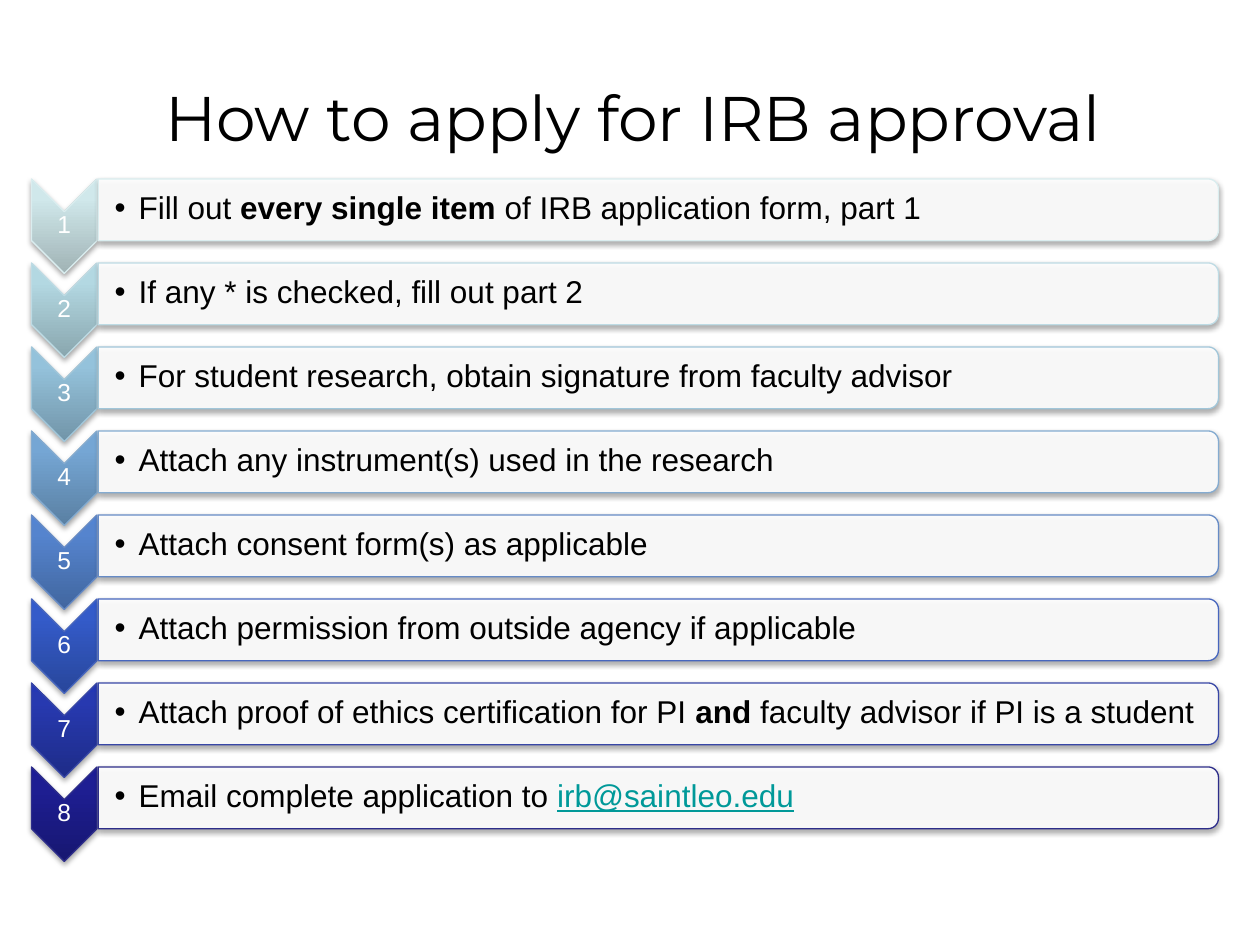
from dataclasses import dataclass

from lxml import etree
from pptx import Presentation, dml, oxml, util as u
from pptx.dml import color
from pptx.enum import shapes, text
from pptx.oxml import ns

Inches = u.Inches


@dataclass(frozen=True)
class Theme:
    head: str = "Montserrat"
    body: str = "Arial"
    ink: str = "000000"
    white: str = "FFFFFF"
    link: str = "009999"
    head_size: int = 36
    body_size: int = 18
    num_size: int = 14
    # Each step: line, then gradient from bottom to top
    steps: tuple = (
        ("DAEDEF", "A0B3B5", "D0E8EB", "D1EAEC"),
        ("BEDBE4", "89A6AE", "B3D8E2", "B2D9E4"),
        ("A1C6D9", "7295A9", "94C2DB", "93C3DD"),
        ("84ABD0", "5A80A3", "75A6D4", "74A7D7"),
        ("668BC6", "41669F", "5584CE", "5384D2"),
        ("4766BE", "28469B", "345BC9", "315ACD"),
        ("3847A6", "1E2C88", "2739B0", "2437B4"),
        ("2D2D8A", "171771", "1E1E93", "1C1C96"),
    )


THEME = Theme()
BOLD = {"bold": True}
LINK = {"tint": THEME.link, "line": True}
ITEMS = (
    (("Fill out ", {}), ("every single item ", BOLD),
     ("of IRB application form, part 1", {})),
    (("If any * is checked, fill out part 2", {}),),
    (("For student research, obtain signature from faculty advisor", {}),),
    (("Attach any instrument(s) used in the research", {}),),
    (("Attach consent form(s) as applicable", {}),),
    (("Attach permission from outside agency if applicable", {}),),
    (("Attach proof of ethics certification for PI ", {}), ("and", BOLD),
     (" faculty advisor if PI is a student", {})),
    (("Email complete application to ", {}), ("irb@saintleo.edu", LINK)),
)
TOP = 1.42
PITCH = 2 / 3


def rgb(code):
    return color.RGBColor.from_string(code)


def node(tag, **attrs):
    item = etree.Element(ns.qn(tag))
    for name, value in attrs.items():
        item.set(name, str(value))
    return item


def tone(code, alpha=100):
    item = node("a:srgbClr", val=code)
    if alpha < 100:
        item.append(node("a:alpha", val=alpha * 1000))
    return item


def write(slide, runs, box, *, font=THEME.body, size=THEME.body_size,
          tint=THEME.ink, align=text.PP_ALIGN.LEFT, inset=0.01, left=None,
          space=None, bullet=False):
    """Add a text box; runs is a list of (words, format) pairs."""
    frame = slide.shapes.add_textbox(*map(Inches, box)).text_frame
    frame.word_wrap = True
    frame.vertical_anchor = text.MSO_ANCHOR.MIDDLE
    frame.margin_top = frame.margin_bottom = frame.margin_right = Inches(inset)
    frame.margin_left = Inches(inset if left is None else left)
    para = frame.paragraphs[0]
    para.alignment = align
    para.line_spacing = space
    if bullet:
        props = para._p.get_or_add_pPr()
        props.set("marL", str(Inches(0.19)))
        props.set("indent", str(-Inches(0.19)))
        props.append(node("a:buFont", typeface=font))
        props.append(node("a:buChar", char="•"))
    for words, form in runs:
        run = para.add_run()
        run.text = words
        run.font.name = font
        run.font.size = u.Pt(size)
        run.font.bold = form.get("bold", False)
        run.font.underline = form.get("line", False)
        run.font.color.rgb = rgb(form.get("tint", tint))


def turned(slide, kind, box, edge):
    """Add a shape turned by 90 degrees that covers box as seen."""
    x, y, w, h = box
    shape = slide.shapes.add_shape(
        kind, Inches(x + (w - h) / 2), Inches(y + (h - w) / 2),
        Inches(h), Inches(w))
    shape.rotation = 90
    shape.line.color.rgb = rgb(edge)
    shape.line.width = u.Pt(0.75)
    shape.shadow.inherit = False
    shade = node("a:outerShdw", blurRad=u.Pt(3.15), dist=u.Pt(1.8),
                 dir=5400000, rotWithShape=0)
    shade.append(tone(THEME.ink, 35))
    shape._element.spPr.find(ns.qn("a:effectLst")).append(shade)
    return shape


def blend(shape, tones):
    """Fill with a gradient that runs from bottom to top."""
    fill = node("a:gradFill", rotWithShape=0)
    stops = node("a:gsLst")
    for place, code in zip((0, 80, 100), tones):
        stop = node("a:gs", pos=place * 1000)
        stop.append(tone(code))
        stops.append(stop)
    fill.extend([stops, node("a:lin", ang=16200000, scaled=0)])
    shape._element.spPr.find(ns.qn("a:ln")).addprevious(fill)


def step(slide, index, runs, tones):
    y = TOP + index * PITCH
    edge, *ramp = tones
    arrow = turned(slide, shapes.MSO_SHAPE.CHEVRON, (0.25, y, 0.52, 0.75), edge)
    blend(arrow, ramp)
    write(slide, [(str(index + 1), {})], (0.25, y + 0.26, 0.52, 0.22),
          size=THEME.num_size, tint=THEME.white,
          align=text.PP_ALIGN.CENTER, space=0.9)
    panel = turned(slide, shapes.MSO_SHAPE.ROUND_2_SAME_RECTANGLE,
                   (0.78, y, 8.89, 0.49), edge)
    panel.fill.solid()
    panel.fill.fore_color.rgb = rgb(THEME.white)
    clear = panel._element.spPr.find(ns.qn("a:solidFill"))[0]
    clear.append(node("a:alpha", val=90000))
    write(slide, runs, (0.77, y + 0.02, 8.87, 0.44), left=0.14,
          space=0.9, bullet=True)


def main():
    deck = Presentation()
    deck.slide_width, deck.slide_height = Inches(10), Inches(7.5)
    slide = deck.slides.add_slide(deck.slide_layouts[6])
    write(slide, [("How to apply for IRB approval", {})], (0.5, 0.3, 9, 1.25),
          font=THEME.head, size=THEME.head_size,
          align=text.PP_ALIGN.CENTER, inset=0.05, left=0.1)
    for index, (runs, tones) in enumerate(zip(ITEMS, THEME.steps)):
        step(slide, index, runs, tones)
    deck.save("out.pptx")


if __name__ == "__main__":
    main()
